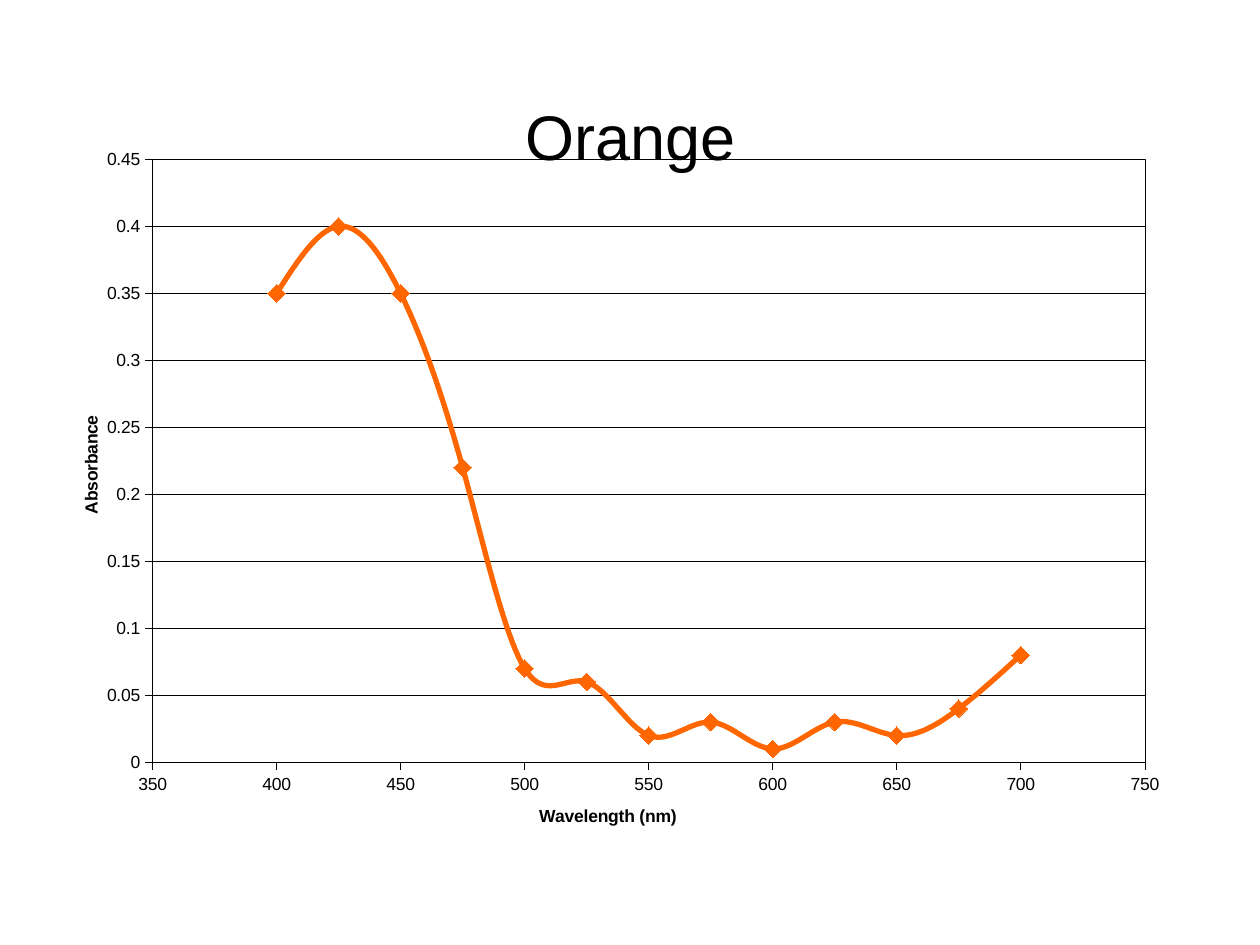
from lxml import etree
from pptx import Presentation
from pptx.chart.data import XyChartData
from pptx.dml.color import RGBColor
from pptx.enum.chart import XL_CHART_TYPE as ChartType, XL_MARKER_STYLE as Marker, XL_TICK_MARK as Tick
from pptx.oxml import parse_xml
from pptx.oxml.ns import nsdecls, qn
from pptx.util import Inches, Pt

SLIDE_SIZE = (10, 7.5)
CHART_BOX = (0.5, 0.58, 9, 6.12)
PLOT_LAYOUT = {"x": 0.079, "y": 0.112, "w": 0.875, "h": 0.782}
BLACK, ORANGE = "000000", "FF6600"
SERIES_NAME = "Orange"
WAVELENGTHS = range(400, 701, 25)
ABSORBANCES = [0.35, 0.4, 0.35, 0.22, 0.07, 0.06, 0.02,
               0.03, 0.01, 0.03, 0.02, 0.04, 0.08]
HEADING = ("Orange", {"size": Pt(36), "bold": False}, {"x": 0.398, "y": 0.015})
AXES = [
    ("category_axis", "Wavelength (nm)", {"x": 0.417, "y": 0.945},
     {"minimum_scale": 350, "maximum_scale": 750, "major_unit": 50, "has_major_gridlines": False}),
    ("value_axis", "Absorbance", {"x": 0.012, "y": 0.44},
     {"minimum_scale": 0, "maximum_scale": 0.45, "major_unit": 0.05, "has_major_gridlines": True}),
]
AXIS_TITLE_FONT = {"size": Pt(10), "bold": True}


def color(value):
    return RGBColor.from_string(value)


def set_all(target, values):
    for name, value in values.items():
        setattr(target, name, value)


def style_font(font, values):
    set_all(font, {"name": "Arial", **values})
    font.color.rgb = color(BLACK)


def style_line(line, value, width):
    line.color.rgb = color(value)
    line.width = Pt(width)


def place(element, fractions, inner=False):
    for old in element.findall(qn("c:layout")):
        element.remove(old)
    layout = parse_xml(f"<c:layout {nsdecls('c')}><c:manualLayout/></c:layout>")
    settings = {"layoutTarget": "inner"} if inner else {}
    settings.update({f"{side}Mode": "edge" for side in "xy"})
    settings.update(fractions)
    for tag, value in settings.items():
        etree.SubElement(layout[0], qn(f"c:{tag}")).set("val", str(value))
    element.insert(0 if inner else 1, layout)


def write_title(title, text, font_values, fractions):
    title.text_frame.text = text
    style_font(title.text_frame.paragraphs[0].runs[0].font, font_values)
    place(title._element, fractions)


def style_axis(chart, axis_name, text, fractions, scale):
    axis = getattr(chart, axis_name)
    set_all(axis, {**scale, "major_tick_mark": Tick.OUTSIDE, "minor_tick_mark": Tick.NONE})
    write_title(axis.axis_title, text, AXIS_TITLE_FONT, fractions)
    set_all(axis.tick_labels, {"number_format": "General", "number_format_is_linked": False})
    style_font(axis.tick_labels.font, {"size": Pt(10)})
    style_line(axis.format.line, BLACK, 0.25)
    if axis.has_major_gridlines:
        style_line(axis.major_gridlines.format.line, BLACK, 0.25)


def style_series(series):
    series._element.find(qn("c:smooth")).set("val", "1")
    style_line(series.format.line, ORANGE, 3)
    set_all(series.marker, {"style": Marker.DIAMOND, "size": 10})
    series.marker.format.fill.solid()
    series.marker.format.fill.fore_color.rgb = color(ORANGE)
    style_line(series.marker.format.line, ORANGE, 0.75)


def frame_plot(plot_area):
    place(plot_area, PLOT_LAYOUT, inner=True)
    plot_area.append(parse_xml(
        f"<c:spPr {nsdecls('c', 'a')}><a:noFill/><a:ln w=\"{Pt(0.25)}\"><a:solidFill>"
        f"<a:srgbClr val=\"{BLACK}\"/></a:solidFill></a:ln></c:spPr>"))


def main():
    presentation = Presentation()
    presentation.slide_width, presentation.slide_height = map(Inches, SLIDE_SIZE)
    slide = presentation.slides.add_slide(presentation.slide_layouts[6])

    spectrum = XyChartData()
    points = spectrum.add_series(SERIES_NAME)
    for wavelength, absorbance in zip(WAVELENGTHS, ABSORBANCES):
        points.add_data_point(wavelength, absorbance)
    chart = slide.shapes.add_chart(
        ChartType.XY_SCATTER_SMOOTH, *map(Inches, CHART_BOX), spectrum).chart

    style_font(chart.font, {"size": Pt(10)})
    chart.has_legend = False
    chart.plots[0].vary_by_categories = False
    write_title(chart.chart_title, *HEADING)
    for axis in AXES:
        style_axis(chart, *axis)
    style_series(chart.plots[0].series[0])
    frame_plot(chart._chartSpace.chart.plotArea)
    presentation.save("out.pptx")


if __name__ == "__main__":
    main()
